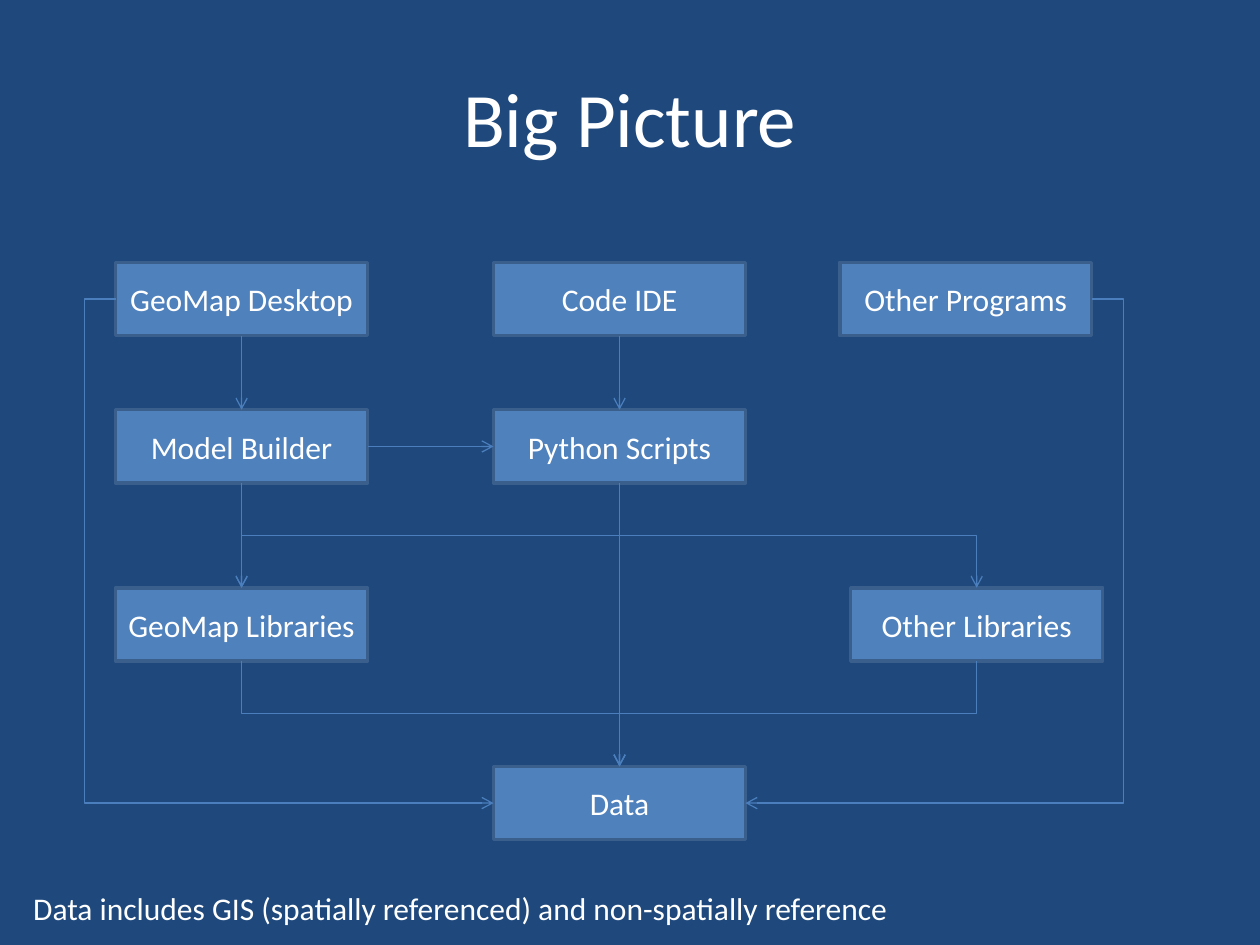
import lxml.etree
import pptx
import pptx.dml.color
import pptx.enum.shapes
import pptx.enum.text
import pptx.oxml.ns
import pptx.util

Cm = pptx.util.Cm
Pt = pptx.util.Pt
qn = pptx.oxml.ns.qn
KIND = pptx.enum.shapes.MSO_CONNECTOR
ALIGN = pptx.enum.text.PP_ALIGN
MIDDLE = pptx.enum.text.MSO_ANCHOR.MIDDLE

HUES = {"back": "1F497D", "box": "4F81BD", "edge": "3A5F8C",
        "line": "4B7EBC", "text": "FFFFFF"}
WIDE, HIGH = 5.08, 1.48  # box size in cm
COLS = {"left": 2.33, "mid": 9.95, "right": 16.93, "libs": 17.15}
ROWS = [5.29, 8.26, 11.85, 15.45]

# name: (label, column, row)
BOXES = {
    "desk": ("GeoMap Desktop", "left", 0),
    "ide": ("Code IDE", "mid", 0),
    "progs": ("Other Programs", "right", 0),
    "model": ("Model Builder", "left", 1),
    "script": ("Python Scripts", "mid", 1),
    "geo": ("GeoMap Libraries", "left", 2),
    "other": ("Other Libraries", "libs", 2),
    "data": ("Data", "mid", 3),
}
DOWN = [("desk", "model"), ("ide", "script"), ("model", "geo"),
        ("script", "geo"), ("script", "data"), ("script", "other"),
        ("geo", "data"), ("other", "data")]


def color(name):
    return pptx.dml.color.RGBColor.from_string(HUES[name])


def site(name, across, down):
    """Point on a box, as fractions of its width and height."""
    _, col, row = BOXES[name]
    return COLS[col] + across * WIDE, ROWS[row] + down * HIGH


class Chart:
    font = "Calibri"

    def __init__(self, deck):
        self.slide = deck.slides.add_slide(deck.slide_layouts[6])
        fill = self.slide.background.fill
        fill.solid()
        fill.fore_color.rgb = color("back")

    def words(self, frame, text, size, align):
        para = frame.paragraphs[0]
        para.text = text
        para.alignment = align
        para.font.name = self.font
        para.font.size = Pt(size)
        para.font.color.rgb = color("text")

    def label(self, text, x, y, w, h, size, align, wrap=True):
        item = self.slide.shapes.add_textbox(Cm(x), Cm(y), Cm(w), Cm(h))
        item.text_frame.word_wrap = wrap
        item.text_frame.vertical_anchor = MIDDLE
        self.words(item.text_frame, text, size, align)

    def box(self, name):
        x, y = site(name, 0, 0)
        item = self.slide.shapes.add_shape(
            pptx.enum.shapes.MSO_SHAPE.RECTANGLE, Cm(x), Cm(y), Cm(WIDE), Cm(HIGH))
        item.shadow.inherit = False
        item.fill.solid()
        item.fill.fore_color.rgb = color("box")
        item.line.color.rgb = color("edge")
        item.line.width = Pt(2)
        item.text_frame.vertical_anchor = MIDDLE
        self.words(item.text_frame, BOXES[name][0], 18, ALIGN.CENTER)

    def arrow(self, start, end, kind=KIND.STRAIGHT):
        item = self.slide.shapes.add_connector(
            kind, *[Cm(n) for n in (*start, *end)])
        item.line.color.rgb = color("line")
        item.line.width = Pt(0.75)
        props = item._element.spPr
        lxml.etree.SubElement(props.find(qn("a:ln")), qn("a:tailEnd"), type="arrow")
        lxml.etree.SubElement(props, qn("a:effectLst"))
        return item

    def drop(self, start, end):
        """Arrow that leaves downwards and bends halfway."""
        (x1, y1), (x2, y2) = start, end
        if x1 == x2:
            self.arrow(start, end)
            return
        # An elbow runs sideways first, so lay it flat and turn it by 90 degrees
        cx, cy = (x1 + x2) / 2, (y1 + y2) / 2
        dx, dy = (x2 - x1) / 2, (y2 - y1) / 2
        item = self.arrow((cx - dy, cy + dx), (cx + dy, cy - dx), KIND.ELBOW)
        item._element.spPr.find(qn("a:xfrm")).set("rot", "5400000")

    def loop(self, start, end, turn):
        """Arrow that goes out to x = turn, then down and back."""
        item = self.arrow(start, end, KIND.ELBOW)
        part = round((turn - start[0]) / (end[0] - start[0]) * 100000)
        geom = item._element.spPr.find(qn("a:prstGeom"))
        lxml.etree.SubElement(geom.find(qn("a:avLst")), qn("a:gd"),
                              name="adj1", fmla=f"val {part}")


def main():
    deck = pptx.Presentation()
    deck.slide_width, deck.slide_height = Cm(25.4), Cm(19.05)
    chart = Chart(deck)

    # Title
    chart.label("Big Picture", 1.27, 0.76, 22.86, 3.18, 44, ALIGN.CENTER)

    # Boxes
    for name in BOXES:
        chart.box(name)

    # Arrows between rows
    for top, low in DOWN:
        chart.drop(site(top, 0.5, 1), site(low, 0.5, 0))

    # Arrows from the sides
    chart.arrow(site("model", 1, 0.5), site("script", 0, 0.5))
    chart.loop(site("desk", 0, 0.5), site("data", 0, 0.5), 1.7)
    chart.loop(site("progs", 1, 0.5), site("data", 1, 0.5), 22.65)

    # Note
    chart.label("Data includes GIS (spatially referenced) and non-spatially reference",
                0.42, 17.78, 17.96, 1.03, 18, ALIGN.LEFT, wrap=False)

    deck.save("out.pptx")


if __name__ == "__main__":
    main()
